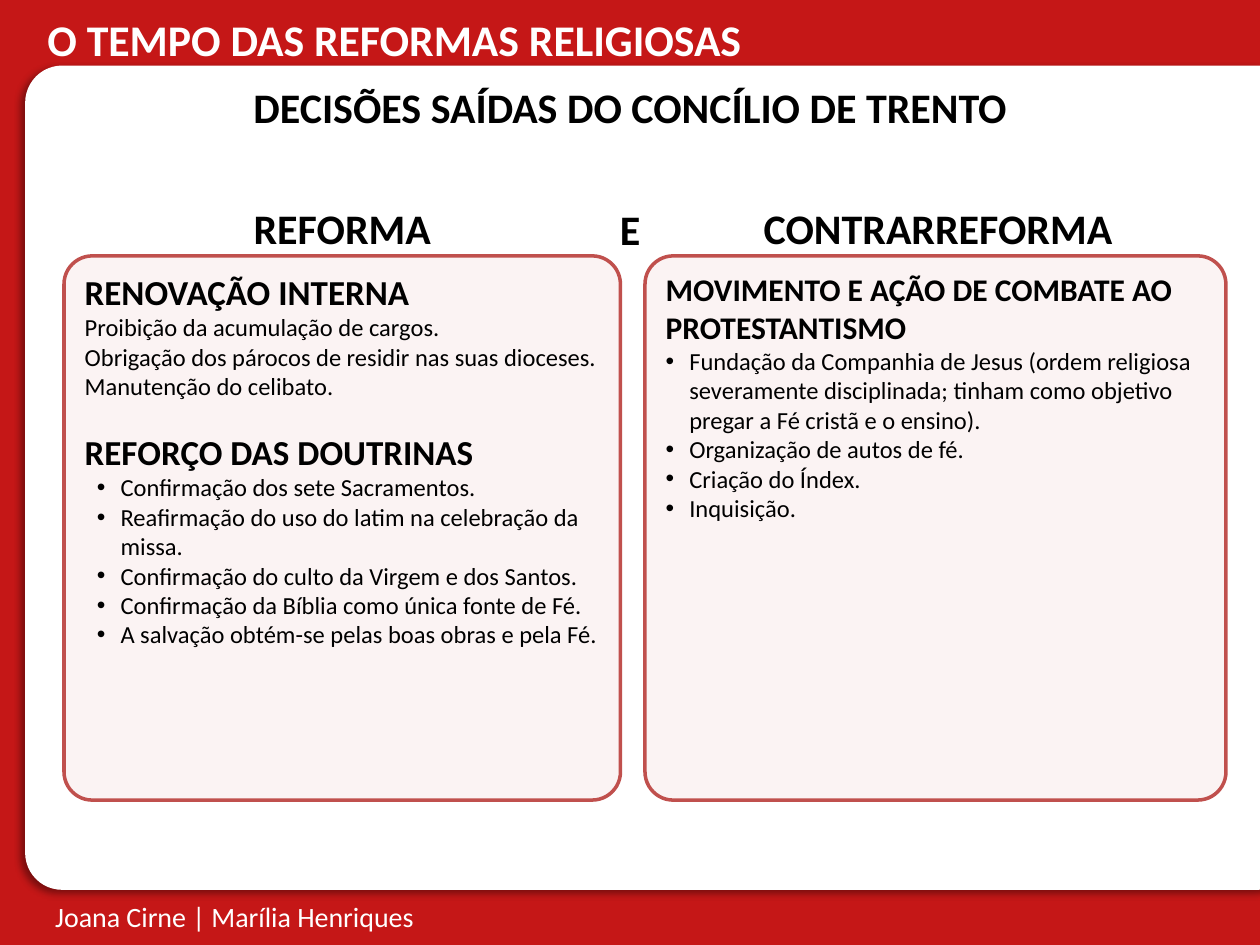
from dataclasses import dataclass

from lxml.etree import SubElement
from pptx import Presentation
from pptx.dml.color import RGBColor
from pptx.enum.shapes import MSO_SHAPE
from pptx.enum.text import MSO_ANCHOR, PP_ALIGN
from pptx.oxml.ns import qn
from pptx.util import Pt


@dataclass(frozen=True)
class Theme:
    """Colours, font and type sizes of the slide."""
    font: str = "Calibri"
    red: str = "C51717"
    white: str = "FFFFFF"
    black: str = "000000"
    panel: str = "FBF3F3"
    border: str = "C0504D"
    title: int = 25
    heading: int = 24
    section: int = 20
    long_section: int = 18
    footer: int = 16
    body: int = 14


THEME = Theme()


def rgb(value):
    """Turn a hex string into a colour."""
    return RGBColor.from_string(value)


def write(paragraph, text, size=THEME.body, bold=False, color=THEME.black,
          align=PP_ALIGN.LEFT, before=0, bullet_indent=None):
    """Fill one paragraph, with a bullet if its indent is given."""
    paragraph.text = text
    paragraph.alignment = align
    paragraph.space_before = Pt(before)
    if bullet_indent is not None:
        properties = paragraph._p.get_or_add_pPr()
        hanging = Pt(13.5)
        properties.set("marL", str(Pt(bullet_indent) + hanging))
        properties.set("indent", str(-hanging))
        SubElement(properties, qn("a:buFont"), typeface="Arial")
        SubElement(properties, qn("a:buChar"), char="•")
    font = paragraph.font
    font.name, font.size, font.bold = THEME.font, Pt(size), bold
    font.color.rgb = rgb(color)


def add_label(slide, box, text, anchor=MSO_ANCHOR.TOP, **text_format):
    """Place a single line of text in a box."""
    frame = slide.shapes.add_textbox(*map(Pt, box)).text_frame
    frame.word_wrap = True
    frame.vertical_anchor = anchor
    write(frame.paragraphs[0], text, **text_format)


def add_rounded(slide, box, fill, radius):
    """Place a rounded rectangle without outline or shadow."""
    rounded = slide.shapes.add_shape(MSO_SHAPE.ROUNDED_RECTANGLE, *map(Pt, box))
    rounded.adjustments[0] = radius
    rounded.shadow.inherit = False
    rounded.fill.solid()
    rounded.fill.fore_color.rgb = rgb(fill)
    rounded.line.fill.background()
    return rounded


def add_sheet(slide, box):
    """Place the white sheet with its soft shadow."""
    sheet = add_rounded(slide, box, THEME.white, 0.045)
    effects = sheet._element.spPr.find(qn("a:effectLst"))
    shadow = SubElement(effects, qn("a:outerShdw"), blurRad=str(Pt(4)), dist=str(Pt(3)),
                        dir=str(135 * 60000), algn="tr", rotWithShape="0")
    shade = SubElement(shadow, qn("a:srgbClr"), val=THEME.black)
    SubElement(shade, qn("a:alpha"), val="40000")


def add_panel(slide, box, paragraphs):
    """Place a bordered panel holding formatted paragraphs."""
    panel = add_rounded(slide, box, THEME.panel, 0.052)
    panel.line.color.rgb = rgb(THEME.border)
    panel.line.width = Pt(2)
    frame = panel.text_frame
    frame.word_wrap = True
    frame.vertical_anchor = MSO_ANCHOR.TOP
    for index, (text, text_format) in enumerate(paragraphs):
        paragraph = frame.add_paragraph() if index else frame.paragraphs[0]
        write(paragraph, text, **text_format)


def add_column(slide, box, heading, paragraphs, heading_shift=0):
    """Place a centred heading above its panel."""
    left, top, width, height = box
    heading_width, heading_height = 318, 32
    add_label(slide, (left + heading_shift, top, heading_width, heading_height), heading,
              anchor=MSO_ANCHOR.MIDDLE, size=THEME.heading, bold=True, align=PP_ALIGN.CENTER)
    add_panel(slide, (left, top + heading_height, width, height - heading_height), paragraphs)


def section(text, items, size, before=0, **item_format):
    """List a bold section title and its items."""
    title = (text, {"size": size, "bold": True, "before": before})
    return [title] + [(item, item_format) for item in items]


def add_frame(slide, box):
    """Place the red background, sheet, slide title and footer."""
    left, top, width, height = box
    slide.background.fill.solid()
    slide.background.fill.fore_color.rgb = rgb(THEME.red)
    add_sheet(slide, (left + 14.4, top + 37.5, width + 5.6, height - 69))
    add_label(slide, (left + 24.5, top + 35, 296, 27)[:1] + (top + height - 29.5, 296, 26.6),
              "Joana Cirne | Marília Henriques", size=THEME.footer, color=THEME.white)
    add_label(slide, (left + 20, top + 3.6, width - 20, 32),
              "O TEMPO DAS REFORMAS RELIGIOSAS",
              size=THEME.title, bold=True, color=THEME.white)


def add_decisions(slide, box):
    """Place the subject line and the two columns of decisions."""
    left, top, width, height = box
    renewal = section("RENOVAÇÃO INTERNA", [
        "Proibição da acumulação de cargos.",
        "Obrigação dos párocos de residir nas suas dioceses.",
        "Manutenção do celibato.",
    ], THEME.section)
    doctrine = section("REFORÇO DAS DOUTRINAS", [
        "Confirmação dos sete Sacramentos.",
        "Reafirmação do uso do latim na celebração da missa.",
        "Confirmação do culto da Virgem e dos Santos.",
        "Confirmação da Bíblia como única fonte de Fé.",
        "A salvação obtém-se pelas boas obras e pela Fé.",
    ], THEME.section, before=17, bullet_indent=7)
    combat = section("MOVIMENTO E AÇÃO DE COMBATE AO PROTESTANTISMO", [
        "Fundação da Companhia de Jesus (ordem religiosa severamente disciplinada; "
        "tinham como objetivo pregar a Fé cristã e o ensino).",
        "Organização de autos de fé.",
        "Criação do Índex.",
        "Inquisição.",
    ], THEME.long_section, bullet_indent=0)
    columns_top, columns_height = top + 71, height - 71
    add_column(slide, (left, columns_top, 318, columns_height), "REFORMA", renewal + doctrine)
    add_column(slide, (left + 332, columns_top, width - 332, columns_height),
               "CONTRARREFORMA", combat, heading_shift=8.5)
    add_label(slide, (left + 86.5, top, 474, 36), "DECISÕES SAÍDAS DO CONCÍLIO DE TRENTO",
              size=THEME.heading, bold=True, align=PP_ALIGN.CENTER)
    add_label(slide, (left + 310.5, columns_top + 0.5, 29.5, 32), "E",
              anchor=MSO_ANCHOR.MIDDLE, size=THEME.heading, bold=True)


def main():
    """Build and save the slide."""
    presentation = Presentation()
    presentation.slide_width, presentation.slide_height = Pt(720), Pt(540)
    slide = presentation.slides.add_slide(presentation.slide_layouts[6])
    add_frame(slide, (0, 0, 720, 540))
    add_decisions(slide, (36.6, 43.2, 664, 414))
    presentation.save("out.pptx")


if __name__ == "__main__":
    main()
